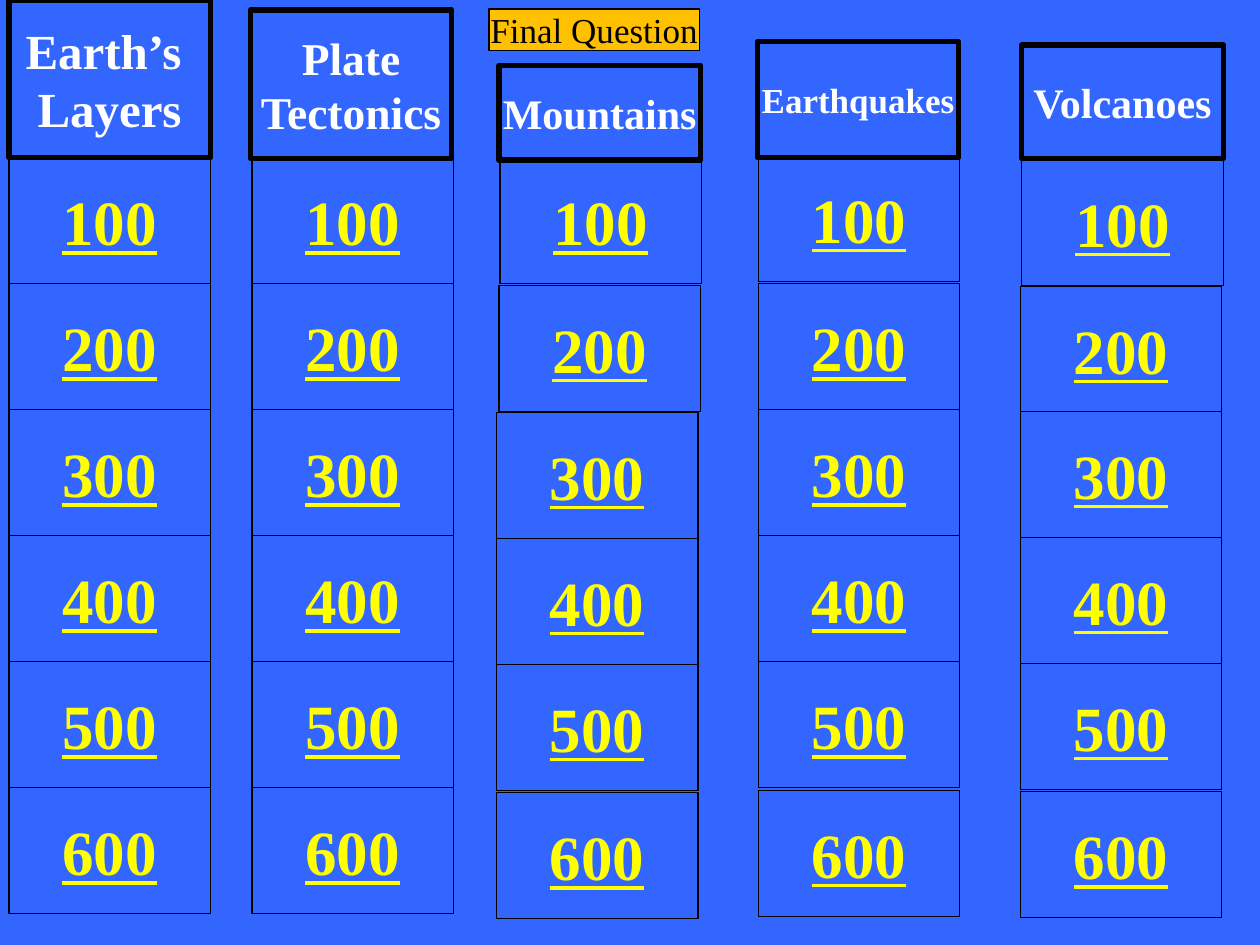
from pptx import Presentation
from pptx.dml.color import RGBColor
from pptx.enum.shapes import MSO_SHAPE
from pptx.enum.text import MSO_ANCHOR, PP_ALIGN
from pptx.util import Cm, Pt

COLORS = {
    "board": "3366FF",
    "outline": "000000",
    "points": "FFFF00",
    "category": "FFFFFF",
    "final": "FFC000",
    "final_text": "000000",
}
FONT = "Times New Roman"
TILE_WIDTH, TILE_HEIGHT = 4.06, 2.54
FIRST_ROW_TOP = 3.18

CATEGORIES = [
    {"lines": ["Earth’s ", "Layers"], "size": 28, "header": (0.18, 0, 3.18),
     "lefts": [0.18] * 6, "shifts": [0] * 6},
    {"lines": ["Plate", "Tectonics"], "size": 26, "header": (5.05, 0.2, 3.0),
     "lefts": [5.08] * 6, "shifts": [0] * 6},
    {"lines": ["Mountains"], "size": 24, "header": (10.06, 1.32, 1.91),
     "lefts": [10.08, 10.06] + [10.01] * 4,
     "shifts": [0, 0.03, 0.05, 0.05, 0.05, 0.1]},
    {"lines": ["Earthquakes"], "size": 20, "header": (15.27, 0.84, 2.34),
     "lefts": [15.29] * 6, "shifts": [-0.05, 0, 0, 0, 0, 0.05]},
    {"lines": ["Volcanoes"], "size": 24, "header": (20.6, 0.91, 2.29),
     "lefts": [20.6] + [20.57] * 5,
     "shifts": [0.03, 0.05, 0.03, 0.03, 0.03, 0.08]},
]


def add_tile(preset, box, fill, line_width, lines, size, color, bold=True, underline=False):
    tile = slide.shapes.add_shape(preset, *[Cm(length) for length in box])
    tile.shadow.inherit = False
    tile.fill.solid()
    tile.fill.fore_color.rgb = RGBColor.from_string(COLORS[fill])
    tile.line.color.rgb = RGBColor.from_string(COLORS["outline"])
    tile.line.width = Pt(line_width)
    frame = tile.text_frame
    frame.word_wrap = False
    frame.vertical_anchor = MSO_ANCHOR.MIDDLE
    frame.text = "\n".join(lines)
    for paragraph in frame.paragraphs:
        paragraph.alignment = PP_ALIGN.CENTER
        paragraph.font.name = FONT
        paragraph.font.size = Pt(size)
        paragraph.font.bold = bold
        paragraph.font.underline = underline
        paragraph.font.color.rgb = RGBColor.from_string(COLORS[color])


deck = Presentation()
deck.slide_width = Cm(25.4)
deck.slide_height = Cm(19.05)
slide = deck.slides.add_slide(deck.slide_layouts[6])
slide.background.fill.solid()
slide.background.fill.fore_color.rgb = RGBColor.from_string(COLORS["board"])

for category in CATEGORIES:
    for row, (left, shift) in enumerate(zip(category["lefts"], category["shifts"])):
        top = FIRST_ROW_TOP + row * TILE_HEIGHT + shift
        add_tile(MSO_SHAPE.ACTION_BUTTON_CUSTOM, (left, top, TILE_WIDTH, TILE_HEIGHT),
                 "board", 0.75, [str(100 * (row + 1))], 36, "points", underline=True)
    left, top, height = category["header"]
    add_tile(MSO_SHAPE.RECTANGLE, (left, top, TILE_WIDTH, height),
             "board", 3, category["lines"], category["size"], "category")

add_tile(MSO_SHAPE.ACTION_BUTTON_CUSTOM, (9.86, 0.18, 4.24, 0.84),
         "final", 0.75, ["Final Question"], 20, "final_text", bold=False)

deck.save("out.pptx")
